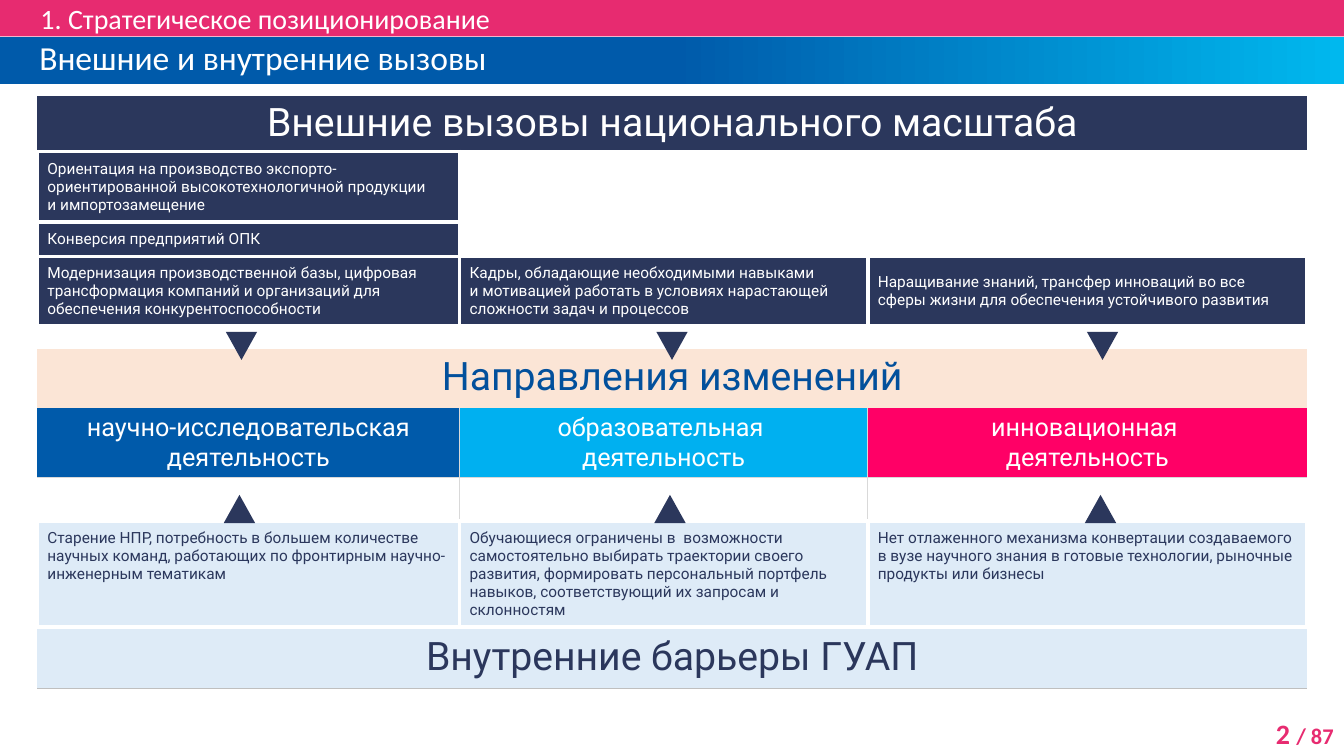
import pptx
import pptx.util
import pptx.dml.color
import pptx.enum.text
import pptx.enum.shapes
import pptx.oxml.ns
from lxml import etree

Cm, Pt = pptx.util.Cm, pptx.util.Pt
ALIGN = pptx.enum.text.PP_ALIGN
MID = pptx.enum.text.MSO_ANCHOR.MIDDLE
TOP = pptx.enum.text.MSO_ANCHOR.TOP
SHAPE = pptx.enum.shapes.MSO_SHAPE
qn = pptx.oxml.ns.qn
HUES = {
    "white": "FFFFFF", "navy": "2B375C", "blue": "005AAA", "cyan": "00B8EE",
    "sky": "00B0F0", "rose": "E72B70", "pink": "FF0066", "peach": "FBE5D6",
    "pale": "DEEBF7", "ink": "02509C", "grey": "D9D9D9", "rule": "BFBFBF",
}
RGB = {name: pptx.dml.color.RGBColor.from_string(hue) for name, hue in HUES.items()}


def style(para, size, hue, face="Roboto", align=ALIGN.LEFT):
    para.alignment = align
    para.font.size = Pt(size)
    para.font.name = face
    para.font.color.rgb = RGB[hue]


def border(cell, sides, hue, width):
    props = cell._tc.get_or_add_tcPr()
    for at, side in enumerate(sides):
        line = etree.Element(qn("a:ln" + side), w=str(Pt(width)))
        fill = etree.SubElement(line, qn("a:solidFill"))
        etree.SubElement(fill, qn("a:srgbClr"), val=HUES[hue])
        # Borders go ahead of the fill, in the order L R T B
        old = len(props.findall(qn("a:lnL")) + props.findall(qn("a:lnR"))
                  + props.findall(qn("a:lnT")) + props.findall(qn("a:lnB")))
        props.insert(old, line)


deck = pptx.Presentation()
deck.slide_width, deck.slide_height = Cm(33.87), Cm(19.05)
slide = deck.slides.add_slide(deck.slide_layouts[5])
shapes = slide.shapes

# Title bar and section bar
title = shapes.title
title.fill.gradient()
title.fill.gradient_angle = 0
for stop, hue, place in zip(title.fill.gradient_stops, ("blue", "cyan"), (0.5, 1)):
    stop.color.rgb = RGB[hue]
    stop.position = place
title.left, title.top, title.width, title.height = Cm(0), Cm(0.92), Cm(33.87), Cm(1.19)
part = shapes.add_shape(SHAPE.RECTANGLE, Cm(0), Cm(0), Cm(33.87), Cm(0.92))
part.shadow.inherit = False
part.fill.solid()
part.fill.fore_color.rgb = RGB["rose"]
part.line.fill.background()
for bar, text, size, inset in ((title, "Внешние и внутренние вызовы", 24, 0.99),
                               (part, "1. Стратегическое позиционирование", 20, 1.02)):
    frame = bar.text_frame
    frame.text = text
    frame.auto_size = pptx.enum.text.MSO_AUTO_SIZE.NONE
    frame.vertical_anchor = MID
    frame.margin_left = Cm(inset)
    frame.margin_top = frame.margin_bottom = Cm(0)
    style(frame.paragraphs[0], size, "white", "Calibri")
title.text_frame.paragraphs[0].line_spacing = Pt(24)

# Table grid
widths = [10.64, 10.29, 11.07]
heights = [1.41, 1.78, 0.86, 1.75, 0.58, 1.49, 1.74, 1.09, 2.67, 1.55]
table = shapes.add_table(len(heights), len(widths), Cm(0.94), Cm(2.41),
                         Cm(sum(widths)), Cm(sum(heights))).table
table.first_row = table.horz_banding = False
table._tbl.tblPr.find(qn("a:tableStyleId")).text = "{2D5ABB26-0587-4C30-8999-92F81FD0307C}"
for col, width in zip(table.columns, widths):
    col.width = Cm(width)
for row, height in zip(table.rows, heights):
    row.height = Cm(height)

# Wide bands: row, text, fill, font colour, anchor
bands = [
    (0, "Внешние вызовы национального масштаба", "navy", "white", MID),
    (5, "Направления изменений", "peach", "ink", TOP),
    (9, "Внутренние барьеры ГУАП", "pale", "navy", MID),
]
for row, text, fill, hue, anchor in bands:
    cell = table.cell(row, 0)
    cell.merge(table.cell(row, 2))
    cell.text = text
    cell.vertical_anchor = anchor
    cell.fill.solid()
    cell.fill.fore_color.rgb = RGB[fill]
    style(cell.text_frame.paragraphs[0], 28, hue, align=ALIGN.CENTER)
table.cell(4, 0).merge(table.cell(4, 2))

# Challenges and barriers
notes = {
    (1, 0): "Ориентация на производство экспорто-ориентированной высокотехнологичной "
            "продукции \vи импортозамещение",
    (2, 0): "Конверсия предприятий ОПК",
    (3, 0): "Модернизация производственной базы, цифровая трансформация компаний "
            "и организаций для обеспечения конкурентоспособности",
    (3, 1): "Кадры, обладающие необходимыми навыками\vи мотивацией работать в условиях "
            "нарастающей сложности задач и процессов",
    (3, 2): "Наращивание знаний, трансфер инноваций во все сферы жизни для обеспечения "
            "устойчивого развития",
    (8, 0): "Старение НПР, потребность в большем количестве научных команд, работающих "
            "по фронтирным научно-инженерным тематикам",
    (8, 1): "Обучающиеся ограничены в  возможности самостоятельно выбирать траектории "
            "своего развития, формировать персональный портфель навыков, "
            "соответствующий их запросам и склонностям",
    (8, 2): "Нет отлаженного механизма конвертации создаваемого в вузе научного знания "
            "в готовые технологии, рыночные продукты или бизнесы",
}
for (row, col), text in notes.items():
    cell = table.cell(row, col)
    cell.text = text
    low = row == 8
    cell.vertical_anchor = TOP if low else MID
    cell.margin_top = cell.margin_bottom = Cm(0.2)
    cell.fill.solid()
    cell.fill.fore_color.rgb = RGB["pale" if low else "navy"]
    style(cell.text_frame.paragraphs[0], 11, "navy" if low else "white")
    border(cell, "LRTB", "white", 3)

# Directions of change
fields = [
    ("научно-исследовательская деятельность", "blue"),
    ("образовательная \vдеятельность", "sky"),
    ("инновационная \vдеятельность", "pink"),
]
for col, (text, fill) in enumerate(fields):
    cell = table.cell(6, col)
    cell.text = text
    cell.vertical_anchor = MID
    cell.fill.solid()
    cell.fill.fore_color.rgb = RGB[fill]
    style(cell.text_frame.paragraphs[0], 18, "white", align=ALIGN.CENTER)
    inner = ("R", "LR", "L")[col]
    border(cell, inner + "B", "grey", 1)
    gap = table.cell(7, col)
    border(gap, inner + "T", "grey", 1)
    border(gap, "B", "white", 3)
    border(table.cell(0, col), "B", "white", 3)
    border(table.cell(9, col), "T", "white", 3)
    border(table.cell(9, col), "B", "rule", 0.5)

# Small type keeps empty cells from growing
for cell in table.iter_cells():
    if not cell.text:
        cell.fill.background()
        etree.SubElement(cell.text_frame.paragraphs[0]._p, qn("a:endParaRPr"), sz="400")

# Pointers toward the directions
for left, top, turn in ((5.69, 8.36, 180), (5.64, 12.47, 0)):
    for col in range(3):
        mark = shapes.add_shape(SHAPE.ISOSCELES_TRIANGLE, Cm(left + 10.85 * col), Cm(top),
                                Cm(0.79), Cm(0.71))
        mark.rotation = turn
        mark.shadow.inherit = False
        mark.fill.solid()
        mark.fill.fore_color.rgb = RGB["navy"]
        mark.line.fill.background()

# Page number
page = shapes.add_textbox(Cm(30.81), Cm(17.93), Cm(3.05), Cm(1.12))
page.text_frame.word_wrap = True
para = page.text_frame.paragraphs[0]
style(para, 16, "rose", "Calibri", ALIGN.RIGHT)
para.font.bold = True
for text, size in (("2 ", 20), ("/ 87", 16)):
    run = para.add_run()
    run.text = text
    run.font.size = Pt(size)

deck.save("out.pptx")
